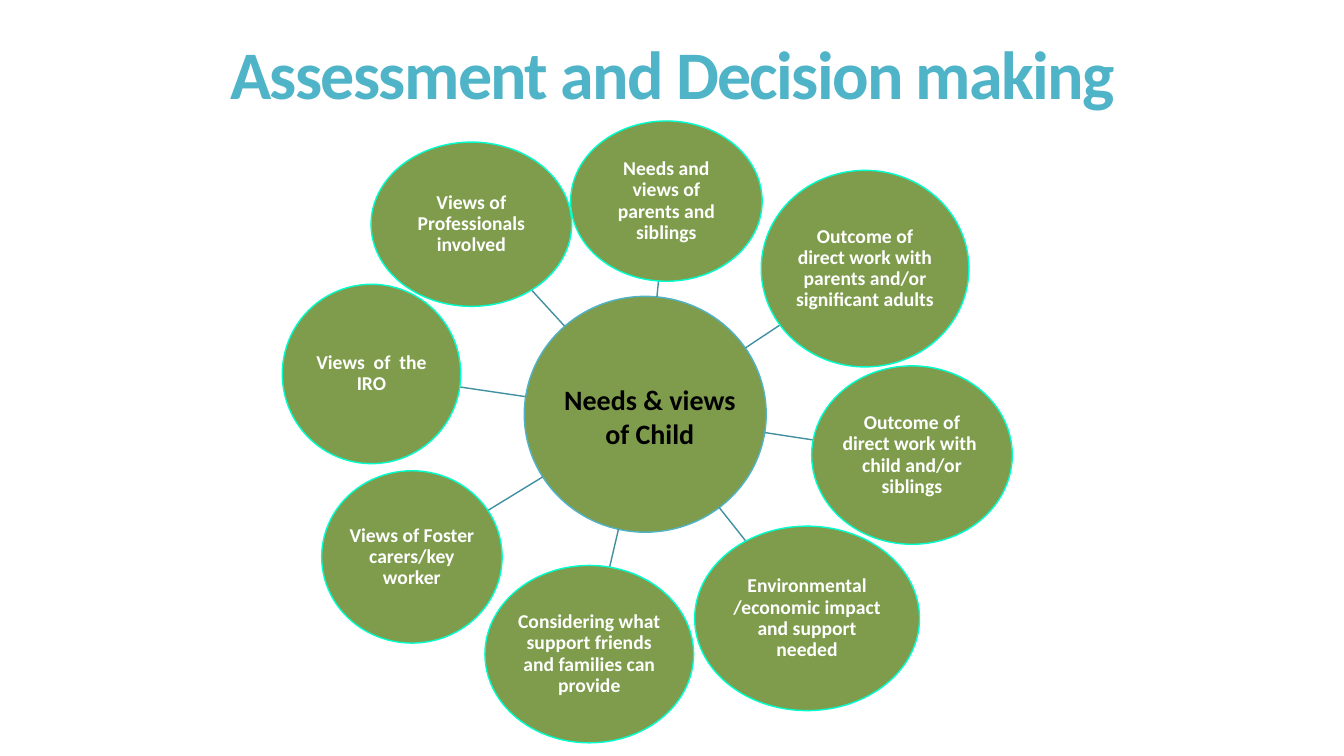
import math

from lxml import etree
from pptx import Presentation
from pptx import util as u
from pptx.dml.color import RGBColor
from pptx.enum import shapes, text
from pptx.oxml.ns import qn

PX = 9144
FONT = "Calibri"
GREEN, TEAL, MINT, SPOKE = "7E9C4C", "50B4C8", "00FFCC", "4090A0"
WHITE, BLACK = "FFFFFF", "000000"
HUB = (520, 294, 240, 234)
VIEWS = [
    ("Needs and views of parents and siblings", (566, 120, 190, 159)),
    ("Outcome of direct work with parents and/or significant adults", (755, 169, 206, 195)),
    ("Outcome of direct work with  child and/or siblings", (805, 363, 199, 177)),
    ("Environmental /economic impact and support needed", (689, 522, 223, 183)),
    ("Considering what support friends and families can provide", (481, 561, 207, 176)),
    ("Views of Foster carers/key worker", (319, 467, 179, 171)),
    ("Views  of  the IRO", (280, 282, 177, 178)),
    ("Views of Professionals involved", (368, 141, 199, 163)),
]


def px(length):
    """Turn px into EMU."""
    return u.Emu(round(length * PX))


def colour(hex_code):
    """Turn a hex string into a colour."""
    return RGBColor.from_string(hex_code)


def write(shape, words, size, ink, spacing=1.0, tracking=0):
    """Put bold, centred, wrapped words into a shape."""
    frame = shape.text_frame
    frame.text = words
    frame.word_wrap = True
    para = frame.paragraphs[0]
    para.alignment = text.PP_ALIGN.CENTER
    para.line_spacing = spacing
    span = para.runs[0]
    span.font.name = FONT
    span.font.size = u.Pt(size)
    span.font.bold = True
    span.font.color.rgb = colour(ink)
    if tracking:
        span.font._element.set("spc", str(tracking))
    return frame


def add_label(page, box, words, size, ink, **style):
    """Add a text box and return its text frame."""
    label = page.shapes.add_textbox(*map(px, box))
    return write(label, words, size, ink, **style)


def add_ellipse(page, box, outline):
    """Add a green ellipse with a thin outline."""
    ellipse = page.shapes.add_shape(shapes.MSO_SHAPE.OVAL, *map(px, box))
    ellipse.shadow.inherit = False
    ellipse.fill.solid()
    ellipse.fill.fore_color.rgb = colour(GREEN)
    ellipse.line.color.rgb = colour(outline)
    ellipse.line.width = u.Pt(1)
    return ellipse


def add_view(page, words, box):
    """Add one outer ellipse with its words."""
    frame = write(add_ellipse(page, box, MINT), words, 14, WHITE, spacing=0.9)
    frame.vertical_anchor = text.MSO_ANCHOR.MIDDLE
    frame.margin_left = frame.margin_right = px(1)
    frame.margin_top = frame.margin_bottom = px(1)


def centre(box):
    """Return the middle point of a box."""
    left, top, width, height = box
    return left + width / 2, top + height / 2


def rim_point(box, target):
    """Return where the ray from an ellipse's centre to a target crosses its rim."""
    x, y = centre(box)
    dx, dy = target[0] - x, target[1] - y
    reach = math.hypot(dx / (box[2] / 2), dy / (box[3] / 2))
    return x + dx / reach, y + dy / reach


def add_spoke(page, start_box, end_box):
    """Join the rims of two ellipses along the line between their centres."""
    start = rim_point(start_box, centre(end_box))
    end = rim_point(end_box, centre(start_box))
    spoke = page.shapes.add_connector(
        shapes.MSO_CONNECTOR.STRAIGHT, *map(px, start + end))
    spoke.line.color.rgb = colour(SPOKE)
    spoke.line.width = u.Pt(1)
    etree.SubElement(spoke._element.spPr, qn("a:effectLst"))


def main():
    """Build and save the slide."""
    deck = Presentation()
    deck.slide_width, deck.slide_height = px(1333), px(750)
    page = deck.slides.add_slide(deck.slide_layouts[6])
    title = add_label(page, (201, 22, 932, 112), "Assessment and Decision making",
                      48.6, TEAL, spacing=0.85, tracking=-120)
    title.vertical_anchor = text.MSO_ANCHOR.MIDDLE
    add_ellipse(page, HUB, TEAL)
    for words, box in VIEWS:
        add_spoke(page, HUB, box)
        add_view(page, words, box)
    add_label(page, (549, 375, 191, 77), "Needs & views of Child", 20, BLACK)
    deck.save("out.pptx")


if __name__ == "__main__":
    main()
